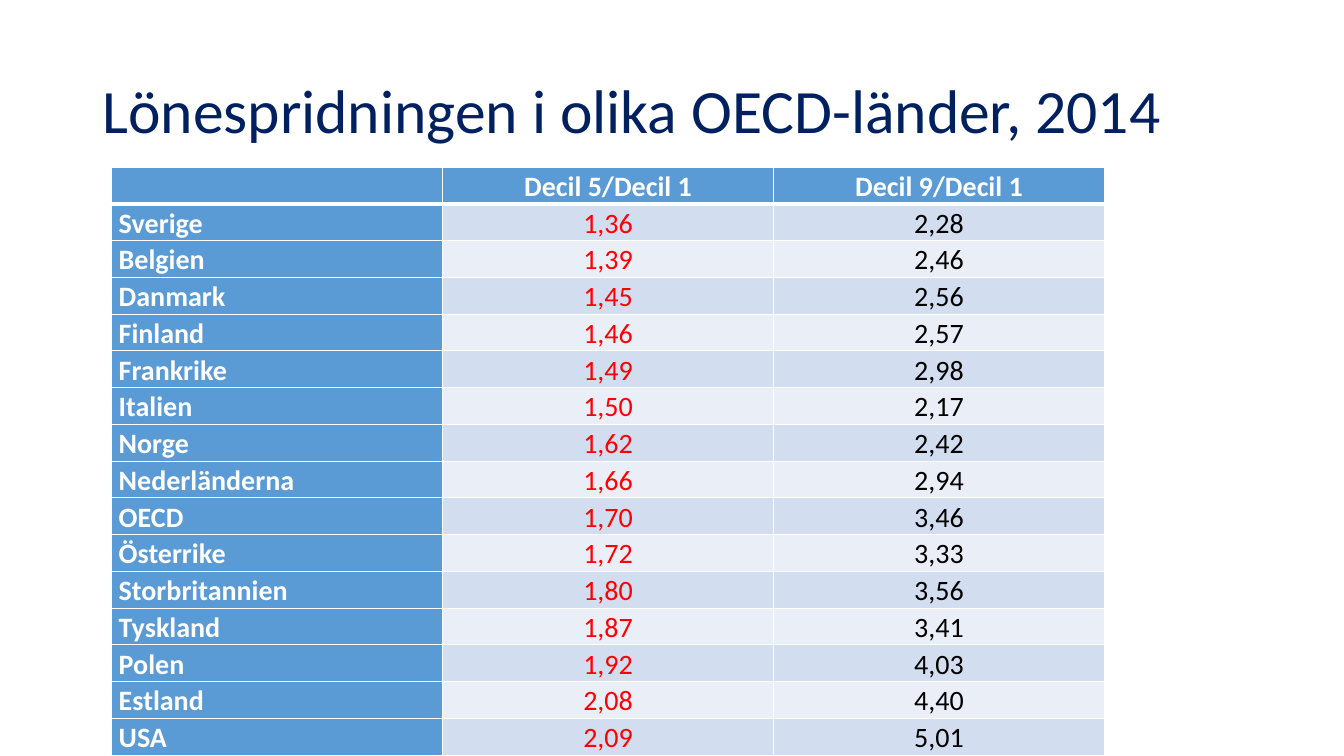
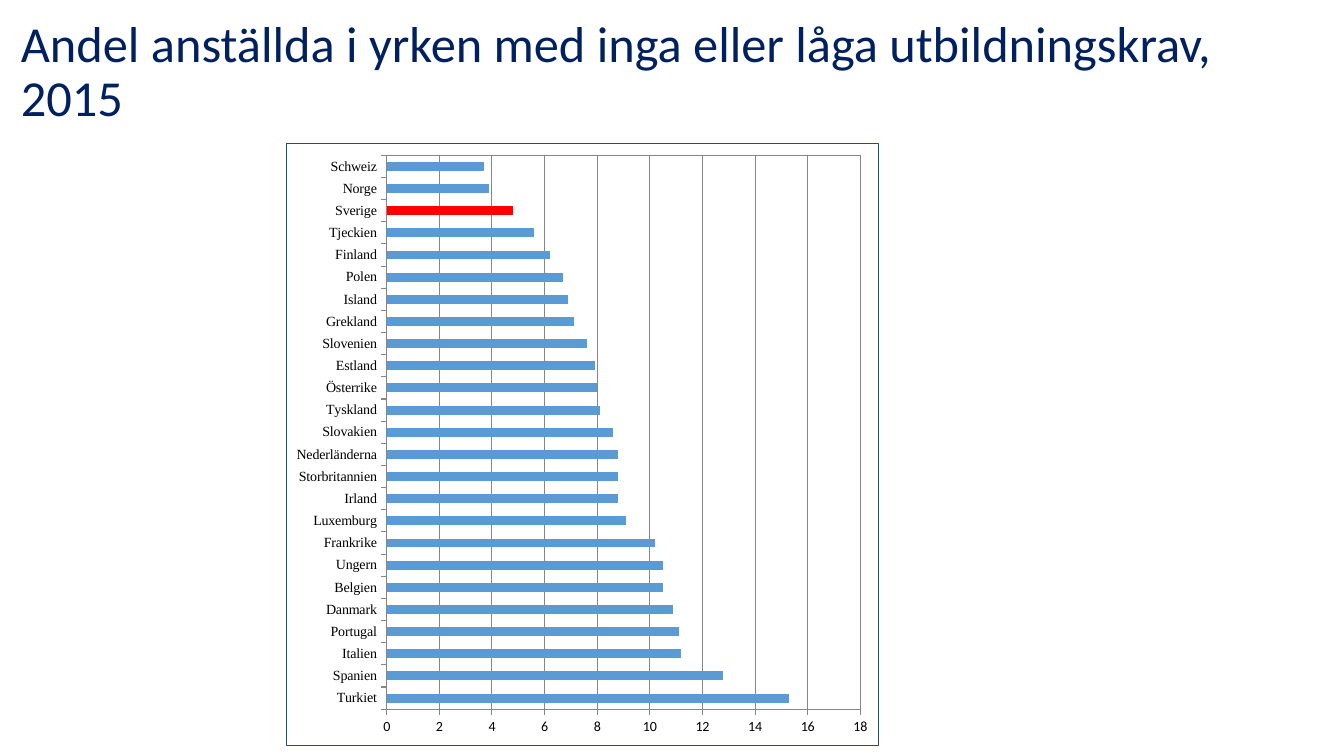
from dataclasses import dataclass

from pptx import Presentation
from pptx.chart.data import CategoryChartData
from pptx.dml.color import RGBColor
from pptx.enum.chart import XL_CHART_TYPE, XL_TICK_MARK
from pptx.enum.text import MSO_ANCHOR, PP_ALIGN
from pptx.oxml import parse_xml
from pptx.oxml.ns import nsdecls, qn
from pptx.util import Emu, Inches, Pt

SLIDE_W, SLIDE_H = Inches(13.33), Inches(7.5)
GRID_COLS, GRID_ROWS = 160, 90
FONT, LABEL_FONT = "Calibri", "Times New Roman"

NAVY = RGBColor(0x00, 0x20, 0x60)
BLUE = RGBColor(0x5B, 0x9B, 0xD5)
DARK_BLUE = RGBColor(0x1F, 0x4E, 0x79)
BAND_DARK = RGBColor(0xD2, 0xDE, 0xEF)
BAND_LIGHT = RGBColor(0xEA, 0xEF, 0xF7)
GREY = RGBColor(0x86, 0x86, 0x86)
RED = RGBColor(0xFF, 0x00, 0x00)
BLACK = RGBColor(0x00, 0x00, 0x00)
WHITE = RGBColor(0xFF, 0xFF, 0xFF)


@dataclass(frozen=True)
class Box:
    col: float
    row: float
    cols: float
    rows: float

    def emu(self) -> tuple[Emu, Emu, Emu, Emu]:
        w, h = SLIDE_W / GRID_COLS, SLIDE_H / GRID_ROWS
        return (Emu(int(self.col * w)), Emu(int(self.row * h)),
                Emu(int(self.cols * w)), Emu(int(self.rows * h)))


@dataclass(frozen=True)
class Spread:
    country: str
    d5_d1: str
    d9_d1: str


@dataclass(frozen=True)
class Share:
    country: str
    percent: float


@dataclass(frozen=True)
class CellStyle:
    fill: RGBColor
    color: RGBColor
    bold: bool
    align: PP_ALIGN
    anchor: MSO_ANCHOR


HEADERS = ("", "Decil 5/Decil 1", "Decil 9/Decil 1")
SPREADS = (
    Spread("Sverige", "1,36", "2,28"),
    Spread("Belgien", "1,39", "2,46"),
    Spread("Danmark", "1,45", "2,56"),
    Spread("Finland", "1,46", "2,57"),
    Spread("Frankrike", "1,49", "2,98"),
    Spread("Italien", "1,50", "2,17"),
    Spread("Norge", "1,62", "2,42"),
    Spread("Nederländerna", "1,66", "2,94"),
    Spread("OECD", "1,70", "3,46"),
    Spread("Österrike", "1,72", "3,33"),
    Spread("Storbritannien", "1,80", "3,56"),
    Spread("Tyskland", "1,87", "3,41"),
    Spread("Polen", "1,92", "4,03"),
    Spread("Estland", "2,08", "4,40"),
    Spread("USA", "2,09", "5,01"),
)
SHARES = (
    Share("Turkiet", 15.3), Share("Spanien", 12.8), Share("Italien", 11.2),
    Share("Portugal", 11.1), Share("Danmark", 10.9), Share("Belgien", 10.5),
    Share("Ungern", 10.5), Share("Frankrike", 10.2), Share("Luxemburg", 9.1),
    Share("Irland", 8.8), Share("Storbritannien", 8.8),
    Share("Nederländerna", 8.8), Share("Slovakien", 8.6),
    Share("Tyskland", 8.1), Share("Österrike", 8), Share("Estland", 7.9),
    Share("Slovenien", 7.6), Share("Grekland", 7.1), Share("Island", 6.9),
    Share("Polen", 6.7), Share("Finland", 6.2), Share("Tjeckien", 5.6),
    Share("Sverige", 4.8), Share("Norge", 3.9), Share("Schweiz", 3.7),
)
HIGHLIGHT = "Sverige"


def add_title(s, text: str, box: Box, size: int) -> None:
    tf = s.shapes.add_textbox(*box.emu()).text_frame
    tf.word_wrap = True
    tf.vertical_anchor = MSO_ANCHOR.MIDDLE
    p = tf.paragraphs[0]
    p.text = text
    p.line_spacing = 0.9
    f = p.runs[0].font
    f.name, f.size, f.color.rgb = FONT, Pt(size), NAVY


def set_borders(cell, top: float, bottom: float) -> None:
    tc_pr = cell._tc.get_or_add_tcPr()
    widths = {"lnL": 1, "lnR": 1, "lnT": top, "lnB": bottom}
    for i, (tag, width) in enumerate(widths.items()):
        tc_pr.insert(i, parse_xml(
            f'<a:{tag} {nsdecls("a")} w="{Pt(width)}"><a:solidFill>'
            f'<a:srgbClr val="{WHITE}"/></a:solidFill></a:{tag}>'))


def cell_style(row: int, col: int) -> CellStyle:
    if row == 0:
        return CellStyle(BLUE, WHITE, True, PP_ALIGN.CENTER, MSO_ANCHOR.TOP)
    if col == 0:
        return CellStyle(BLUE, WHITE, True, PP_ALIGN.LEFT, MSO_ANCHOR.BOTTOM)
    return CellStyle(BAND_DARK if row % 2 else BAND_LIGHT,
                     RED if col == 1 else BLACK, False,
                     PP_ALIGN.CENTER, MSO_ANCHOR.MIDDLE)


def fill_cell(cell, text: str, style: CellStyle) -> None:
    cell.fill.solid()
    cell.fill.fore_color.rgb = style.fill
    cell.margin_left = cell.margin_right = Inches(0.07)
    cell.margin_top = cell.margin_bottom = 0
    cell.vertical_anchor = style.anchor
    p = cell.text_frame.paragraphs[0]
    p.text = text
    p.alignment = style.align
    p.line_spacing = 1.07
    for r in p.runs:
        f = r.font
        f.name, f.size, f.bold = FONT, Pt(20), style.bold
        f.color.rgb = style.color


def add_spread_table(s, box: Box) -> None:
    lines = [HEADERS] + [(x.country, x.d5_d1, x.d9_d1) for x in SPREADS]
    table = s.shapes.add_table(len(lines), len(HEADERS), *box.emu()).table
    table.horz_banding = False
    for i, line in enumerate(lines):
        for j, text in enumerate(line):
            cell = table.cell(i, j)
            fill_cell(cell, text, cell_style(i, j))
            set_borders(cell, 3 if i == 1 else 1, 3 if i == 0 else 1)


def outline_xml(color: RGBColor):
    return parse_xml(
        f'<c:spPr {nsdecls("c", "a")}><a:noFill/><a:ln w="{Pt(0.75)}">'
        f'<a:solidFill><a:srgbClr val="{color}"/></a:solidFill></a:ln></c:spPr>')


def frame_chart(chart, plot: Box) -> None:
    chart_xml = chart._chartSpace.find(qn("c:chart"))
    chart_xml.addnext(outline_xml(DARK_BLUE))
    area = chart_xml.find(qn("c:plotArea"))
    for old in area.findall(qn("c:layout")):
        area.remove(old)
    shares = {"x": plot.col, "y": plot.row, "w": plot.cols, "h": plot.rows}
    modes = "".join(f'<c:{k}Mode val="edge"/>' for k in "xy")
    values = "".join(f'<c:{k} val="{v}"/>' for k, v in shares.items())
    area.insert(0, parse_xml(
        f'<c:layout {nsdecls("c")}><c:manualLayout>'
        f'<c:layoutTarget val="inner"/>{modes}{values}'
        f'</c:manualLayout></c:layout>'))
    area.append(outline_xml(GREY))


def add_share_chart(s, box: Box) -> None:
    data = CategoryChartData()
    data.categories = [x.country for x in SHARES]
    data.add_series("Series 1", [x.percent for x in SHARES])
    chart = s.shapes.add_chart(
        XL_CHART_TYPE.BAR_CLUSTERED, *box.emu(), data).chart
    chart.has_legend = chart.has_title = False
    f = chart.font
    f.name, f.size, f.color.rgb = FONT, Pt(10), BLACK

    plot = chart.plots[0]
    plot.gap_width = 150
    plot.vary_by_categories = False
    bars = plot.series[0]
    bars.format.fill.solid()
    bars.format.fill.fore_color.rgb = BLUE
    index = [x.country for x in SHARES].index(HIGHLIGHT)
    fill = bars.points[index].format.fill
    fill.solid()
    fill.fore_color.rgb = RED

    cat, val = chart.category_axis, chart.value_axis
    for axis in (cat, val):
        axis.major_tick_mark = XL_TICK_MARK.OUTSIDE
        axis.minor_tick_mark = XL_TICK_MARK.NONE
        axis.format.line.color.rgb = GREY
    f = cat.tick_labels.font
    f.name, f.size, f.color.rgb = LABEL_FONT, Pt(10), BLACK
    val.minimum_scale, val.maximum_scale, val.major_unit = 0, 18, 2
    val.has_major_gridlines = True
    val.major_gridlines.format.line.color.rgb = GREY
    frame_chart(chart, Box(0.17, 0.02, 0.8, 0.92))


def main() -> None:
    prs = Presentation()
    prs.slide_width, prs.slide_height = SLIDE_W, SLIDE_H
    blank = prs.slide_layouts[6]

    s = prs.slides.add_slide(blank)
    add_title(s, "Lönespridningen i olika OECD-länder, 2014",
              Box(11, 4.8, 138, 17.4), 44)
    add_spread_table(s, Box(13.3, 19.9, 118.2, 70))

    s = prs.slides.add_slide(blank)
    add_title(s, "Andel anställda i yrken med inga eller låga utbildningskrav, 2015",
              Box(1.3, 0, 156.1, 17.4), 36)
    add_share_chart(s, Box(34, 17, 70.6, 71.8))

    prs.save("out.pptx")


if __name__ == "__main__":
    main()
